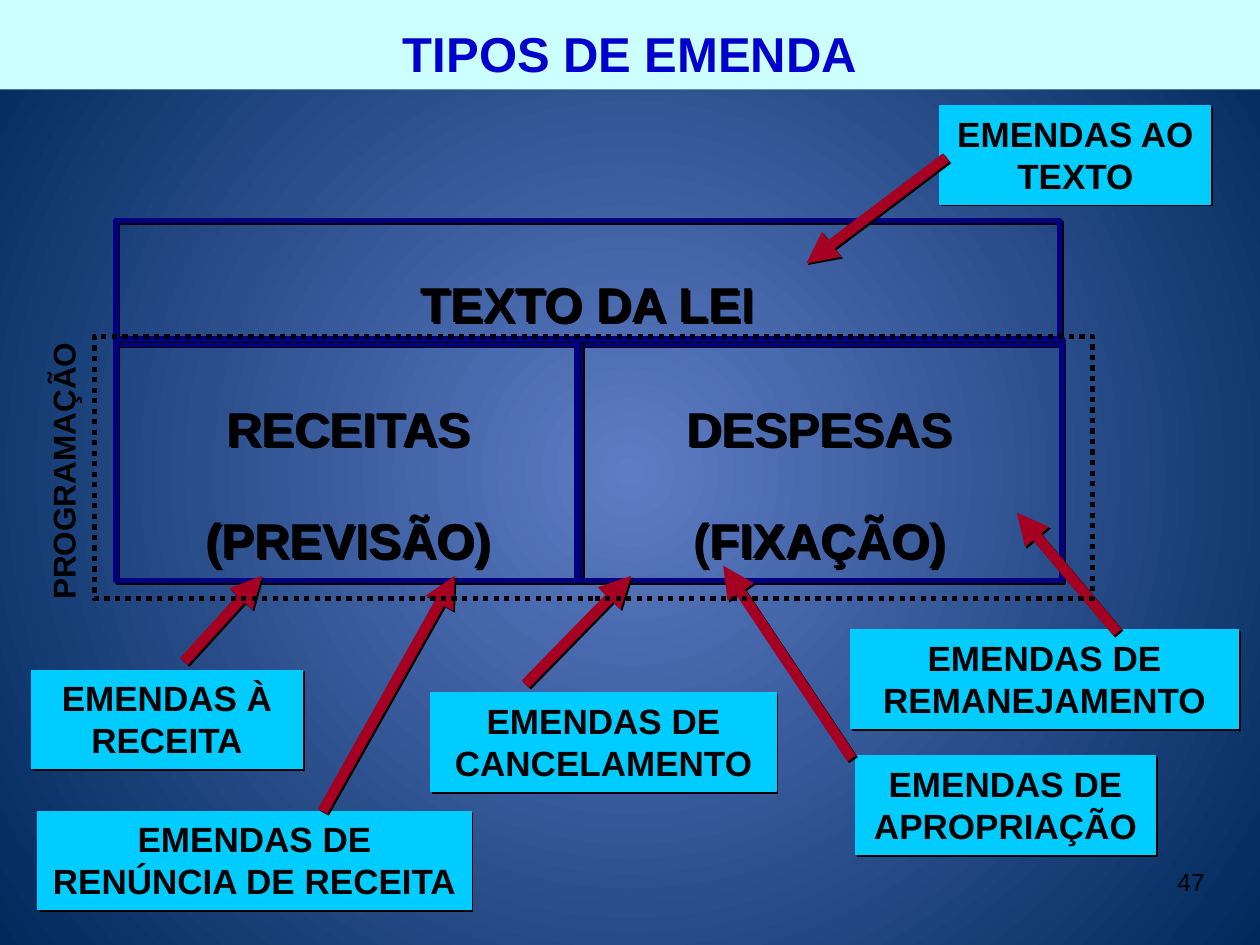
from lxml.etree import SubElement
from pptx import Presentation
from pptx.dml.color import RGBColor
from pptx.enum.dml import MSO_LINE
from pptx.enum.shapes import MSO_CONNECTOR, MSO_SHAPE
from pptx.enum.text import MSO_ANCHOR, MSO_AUTO_SIZE, PP_ALIGN
from pptx.oxml.ns import qn
from pptx.util import Inches, Pt

COLORS = {name: RGBColor.from_string(value) for name, value in {
    "center": "5E7CC5", "edge": "00295C", "navy": "000080", "cyan": "00CCFF",
    "red": "A50021", "black": "000000", "band": "CCFFFF", "title": "0000CC",
}.items()}

presentation = Presentation()
presentation.slide_width, presentation.slide_height = Inches(10), Inches(7.5)
slide = presentation.slides.add_slide(presentation.slide_layouts[6])
shapes = slide.shapes

# The slide is a grid of 100 columns by 75 rows
column = presentation.slide_width / 100
row = presentation.slide_height / 75


def add_shadow(shape):
    """Cast a hard black shadow to the lower right."""
    properties = shape._element.spPr
    effects = properties.find(qn("a:effectLst"))
    if effects is None:
        effects = SubElement(properties, qn("a:effectLst"))
    shadow = SubElement(effects, qn("a:outerShdw"), blurRad="0", dist=str(Pt(1.4)),
                        dir=str(45 * 60000), algn="ctr", rotWithShape="0")
    SubElement(shadow, qn("a:srgbClr"), val=str(COLORS["black"]))


def add_box(place, text="", size=20, color="black", fill=None, line=None, width=0.75,
            spacing=None, before=0):
    left, top, across, down = place
    shape = shapes.add_shape(MSO_SHAPE.RECTANGLE, round(left * column), round(top * row),
                             round(across * column), round(down * row))
    shape.shadow.inherit = False
    if fill:
        shape.fill.solid()
        shape.fill.fore_color.rgb = COLORS[fill]
    else:
        shape.fill.background()
    if line:
        shape.line.color.rgb = COLORS[line]
        shape.line.width = Pt(width)
    else:
        shape.line.fill.background()
    frame = shape.text_frame
    frame.word_wrap = True
    frame.vertical_anchor = MSO_ANCHOR.TOP
    frame.auto_size = MSO_AUTO_SIZE.SHAPE_TO_FIT_TEXT if text else MSO_AUTO_SIZE.NONE
    paragraph = frame.paragraphs[0]
    paragraph.text = text
    paragraph.alignment = PP_ALIGN.CENTER
    paragraph.space_before = Pt(before)
    paragraph.line_spacing = spacing
    paragraph.font.name = "Arial"
    paragraph.font.size = Pt(size)
    paragraph.font.bold = True
    paragraph.font.color.rgb = COLORS[color]
    return shape


# Radial background
background = slide.background.fill
background.gradient()
for stop, name in zip(background.gradient_stops, ("center", "edge")):
    stop.color.rgb = COLORS[name]
gradient = slide.element.find(".//" + qn("a:gradFill"))
gradient.remove(gradient.find(qn("a:lin")))
circle = SubElement(gradient, qn("a:path"), path="circle")
SubElement(circle, qn("a:fillToRect"), l="50000", t="50000", r="50000", b="50000")

# Parts of the budget law
for place, text, spacing in [
    ((9.2, 17.5, 74.9, 9.8), "TEXTO DA LEI", 1.8),
    ((9.2, 26.9, 36.9, 19.2), "RECEITAS (PREVISÃO)", 1.9),
    ((45.8, 26.9, 38.5, 19.2), "DESPESAS (FIXAÇÃO)", 1.9),
]:
    add_shadow(add_box(place, text, 28, line="navy", width=3, spacing=spacing, before=17.5))

# Kinds of amendment
for left, top, across, text in [
    (2.5, 53.2, 21.5, "EMENDAS À RECEITA"),
    (34.2, 55, 27.4, "EMENDAS DE CANCELAMENTO"),
    (67.9, 60, 23.8, "EMENDAS DE APROPRIAÇÃO"),
    (74.6, 8.4, 21.5, "EMENDAS AO TEXTO"),
    (67.5, 50, 30.8, "EMENDAS DE REMANEJAMENTO"),
    (3, 64.4, 34.4, "EMENDAS DE RENÚNCIA DE RECEITA"),
]:
    add_shadow(add_box((left, top, across, 7.8), text, fill="cyan", line="cyan", before=12.5))

# Arrows from each amendment to the part it changes
for start_x, start_y, end_x, end_y in [
    (75.1, 12.5, 64, 20.9),
    (67.6, 60.2, 57.4, 44.9),
    (41.7, 54.3, 50.1, 45.7),
    (14.6, 52.5, 20.8, 45.7),
    (88.7, 50.2, 80.7, 40.7),
    (25.6, 64.4, 36.1, 45.7),
]:
    arrow = shapes.add_connector(MSO_CONNECTOR.STRAIGHT, round(start_x * column),
                                 round(start_y * row), round(end_x * column), round(end_y * row))
    arrow.line.color.rgb = COLORS["red"]
    arrow.line.width = Pt(6)
    SubElement(arrow.line._get_or_add_ln(), qn("a:tailEnd"), type="triangle")
    add_shadow(arrow)

# Dotted frame around the programming part, and the title band
programming = add_box((7.5, 26.7, 79.2, 20.8), line="black", width=3)
programming.line.dash_style = MSO_LINE.ROUND_DOT
add_box((0, 0, 100, 7.1), "TIPOS DE EMENDA", 28, "title", fill="band", spacing=1.3, before=20)

# Side label and slide number
for place, text, size, bold, alignment, rotation in [
    ((-6.2, 35.4, 22.4, 4), "PROGRAMAÇÃO", 18, True, PP_ALIGN.CENTER, 270),
    ((73.3, 68.3, 23.3, 5.2), "47", 14, False, PP_ALIGN.RIGHT, 0),
]:
    left, top, across, down = place
    label = shapes.add_textbox(round(left * column), round(top * row),
                               round(across * column), round(down * row))
    label.rotation = rotation
    label.text_frame.word_wrap = not rotation
    if rotation:
        label.text_frame.vertical_anchor = MSO_ANCHOR.MIDDLE
        label.text_frame.auto_size = MSO_AUTO_SIZE.SHAPE_TO_FIT_TEXT
    paragraph = label.text_frame.paragraphs[0]
    paragraph.text = text
    paragraph.alignment = alignment
    paragraph.font.name = "Arial"
    paragraph.font.size = Pt(size)
    paragraph.font.bold = bold
    paragraph.font.color.rgb = COLORS["black"]

presentation.save("out.pptx")
